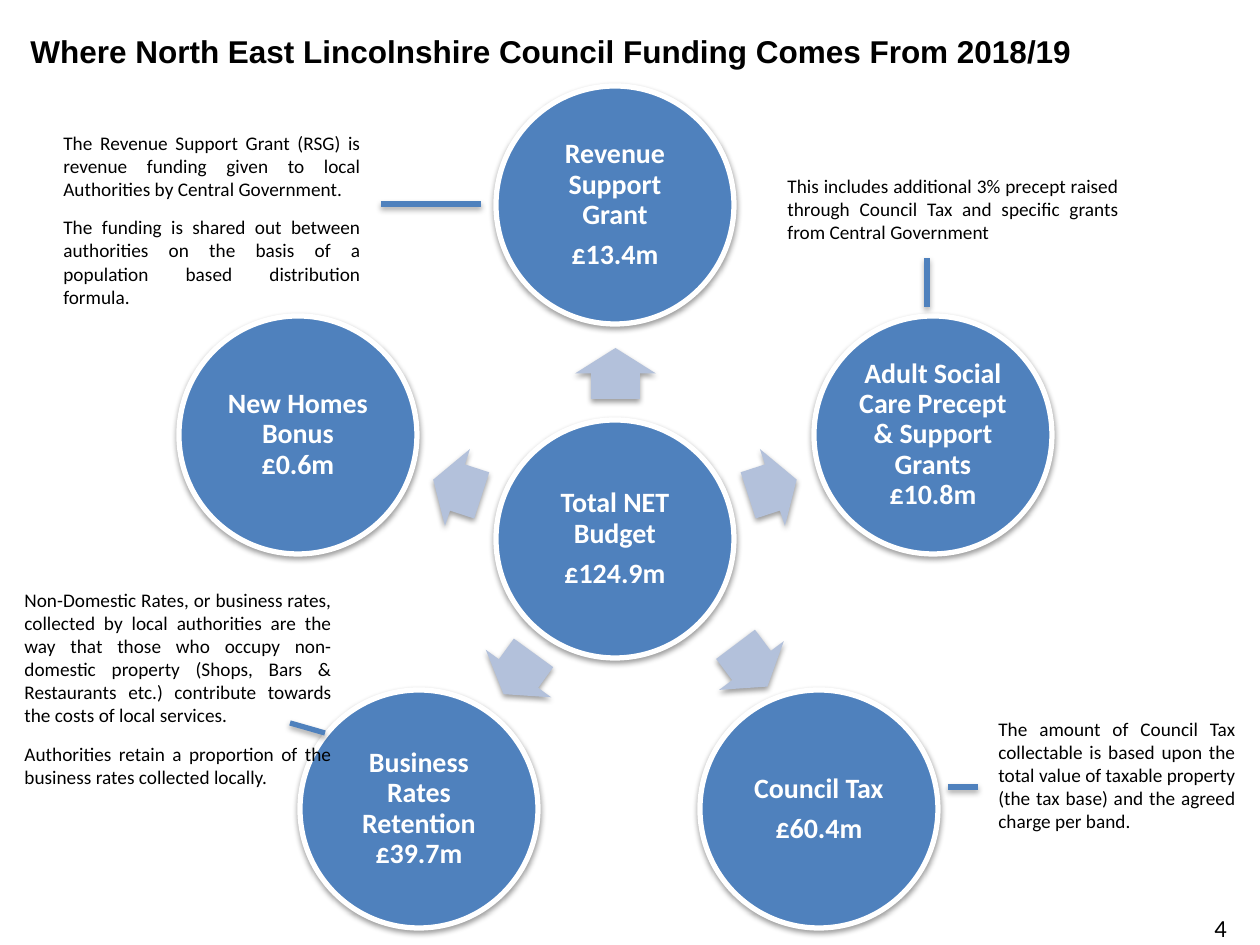
"""Build the council funding slide: a hub of circles with arrows and notes."""
from lxml.etree import SubElement
from pptx import Presentation
from pptx.dml.color import RGBColor
from pptx.enum.shapes import MSO_CONNECTOR as LINK, MSO_SHAPE as SHAPE
from pptx.enum.text import MSO_ANCHOR as ANCHOR, PP_ALIGN as ALIGN
from pptx.oxml.ns import qn
from pptx.util import Emu, Pt

PX = 914400 / 126
BLUE = RGBColor(0x4F, 0x81, 0xBD)
PALE = RGBColor(0xB3, 0xC1, 0xDB)
WHITE = RGBColor(0xFF, 0xFF, 0xFF)
BLACK = RGBColor(0x00, 0x00, 0x00)

CIRCLE_SIZE = 238
ARROW_HEIGHT = 81
CIRCLE_PARA = {"alignment": ALIGN.CENTER, "line_spacing": 0.9, "space_after": Pt(5.6)}
CIRCLE_FONT = {"name": "Calibri", "size": Pt(16), "bold": True}
NOTE_PARA = {"alignment": ALIGN.JUSTIFY, "space_before": Pt(4.3), "space_after": Pt(4.3)}
NOTE_FONT = {"name": "Calibri", "size": Pt(11)}
TITLE_FONT = {"name": "Arial", "size": Pt(18), "bold": True}
NUMBER_FONT = {"name": "Calibri", "size": Pt(14)}

CIRCLES = [
    (496, 420, ["Total NET Budget", "£124.9m"]),
    (496, 86, ["Revenue Support Grant", "£13.4m"]),
    (814, 316, ["Adult Social Care Precept & Support Grants £10.8m"]),
    (700, 690, ["Council Tax", "£60.4m"]),
    (300, 690, ["Business Rates Retention\v£39.7m"]),
    (179, 316, ["New Homes Bonus\v£0.6m"]),
]
ARROWS = [
    (590, 333, 51, 270),
    (747, 447, 51, 342),
    (725, 625, 53, 53),
    (493, 633, 51, 126),
    (432, 447, 51, 198),
]
NOTES = [
    ((43, 125, 338, 189), [
        "The Revenue Support Grant (RSG) is revenue funding given to local "
        "Authorities by Central Government.",
        "The funding is shared out between authorities on the basis of a "
        "population based distribution formula.",
    ]),
    ((4, 582, 348, 214), [
        "Non-Domestic Rates, or business rates, collected by local authorities "
        "are the way that those who occupy non-domestic property (Shops, Bars & "
        "Restaurants etc.) contribute towards the costs of local services.",
        "Authorities retain a proportion of the business rates collected locally.",
    ]),
    ((978, 711, 278, 152), [
        "The amount of Council Tax collectable is based upon the total value of "
        "taxable property (the tax base) and the agreed charge per band.",
    ]),
    ((767, 168, 372, 74), [
        "This includes additional 3% precept raised through Council Tax and "
        "specific grants from Central Government",
    ]),
]
LINKS = [
    (927, 307, 927, 258),
    (381, 204, 481, 204),
    (290, 723, 325, 733),
    (948, 787, 978, 787),
]


def write(frame, texts, para_format, font_format, color):
    frame.word_wrap = True
    for index, text in enumerate(texts):
        para = frame.add_paragraph() if index else frame.paragraphs[0]
        para.text = text
        for name, value in para_format.items():
            setattr(para, name, value)
        for span in para.runs:
            span.font.color.rgb = color
            for name, value in font_format.items():
                setattr(span.font, name, value)


def add_shadow(properties, distance, opacity):
    effects = properties.find(qn("a:effectLst"))
    if effects is None:
        effects = SubElement(properties, qn("a:effectLst"))
    shadow = SubElement(effects, qn("a:outerShdw"), blurRad="40000",
                        dist=str(distance), dir="5400000", rotWithShape="0")
    tint = SubElement(shadow, qn("a:srgbClr"), val=str(BLACK))
    SubElement(tint, qn("a:alpha"), val=str(opacity * 1000))


deck = Presentation()
deck.slide_width, deck.slide_height = Emu(round(1260 * PX)), Emu(round(945 * PX))
page = deck.slides.add_slide(deck.slide_layouts[6])

for left, top, texts in CIRCLES:
    area = [round(v * PX) for v in (left, top, CIRCLE_SIZE, CIRCLE_SIZE)]
    circle = page.shapes.add_shape(SHAPE.OVAL, *area)
    circle.fill.solid()
    circle.fill.fore_color.rgb = BLUE
    circle.line.color.rgb = WHITE
    circle.line.width = Pt(3)
    circle.shadow.inherit = False
    add_shadow(circle.element.spPr, 20000, 38)
    frame = circle.text_frame
    frame.vertical_anchor = ANCHOR.MIDDLE
    for side in ("left", "top", "right", "bottom"):
        setattr(frame, f"margin_{side}", round(3 * PX))
    write(frame, texts, CIRCLE_PARA, CIRCLE_FONT, WHITE)

for left, top, width, angle in ARROWS:
    area = [round(v * PX) for v in (left, top, width, ARROW_HEIGHT)]
    arrow = page.shapes.add_shape(SHAPE.RIGHT_ARROW, *area)
    arrow.adjustments[0], arrow.adjustments[1] = 0.6, 0.5
    arrow.rotation = angle
    arrow.fill.solid()
    arrow.fill.fore_color.rgb = PALE
    arrow.line.fill.background()
    arrow.shadow.inherit = False
    add_shadow(arrow.element.spPr, 20000, 38)

for area, texts in NOTES:
    box = page.shapes.add_textbox(*[round(v * PX) for v in area])
    write(box.text_frame, texts, NOTE_PARA, NOTE_FONT, BLACK)
    for para in box.text_frame.paragraphs:
        indents = para._p.get_or_add_pPr()
        for side in ("marL", "marR"):
            indents.set(side, str(round(8 * PX)))

for ends in LINKS:
    link = page.shapes.add_connector(LINK.STRAIGHT, *[round(v * PX) for v in ends])
    link.line.color.rgb = BLUE
    link.line.width = Pt(3)
    add_shadow(link.element.spPr, 23000, 35)

title = page.shapes.add_textbox(*[round(v * PX) for v in (18, 26, 1217, 50)])
write(title.text_frame, ["Where North East Lincolnshire Council Funding Comes From 2018/19"],
      {"alignment": ALIGN.LEFT}, TITLE_FONT, BLACK)

number = page.shapes.add_textbox(*[round(v * PX) for v in (1196, 907, 49, 43)])
write(number.text_frame, ["4"], {"alignment": ALIGN.CENTER}, NUMBER_FONT, BLACK)

deck.save("out.pptx")
